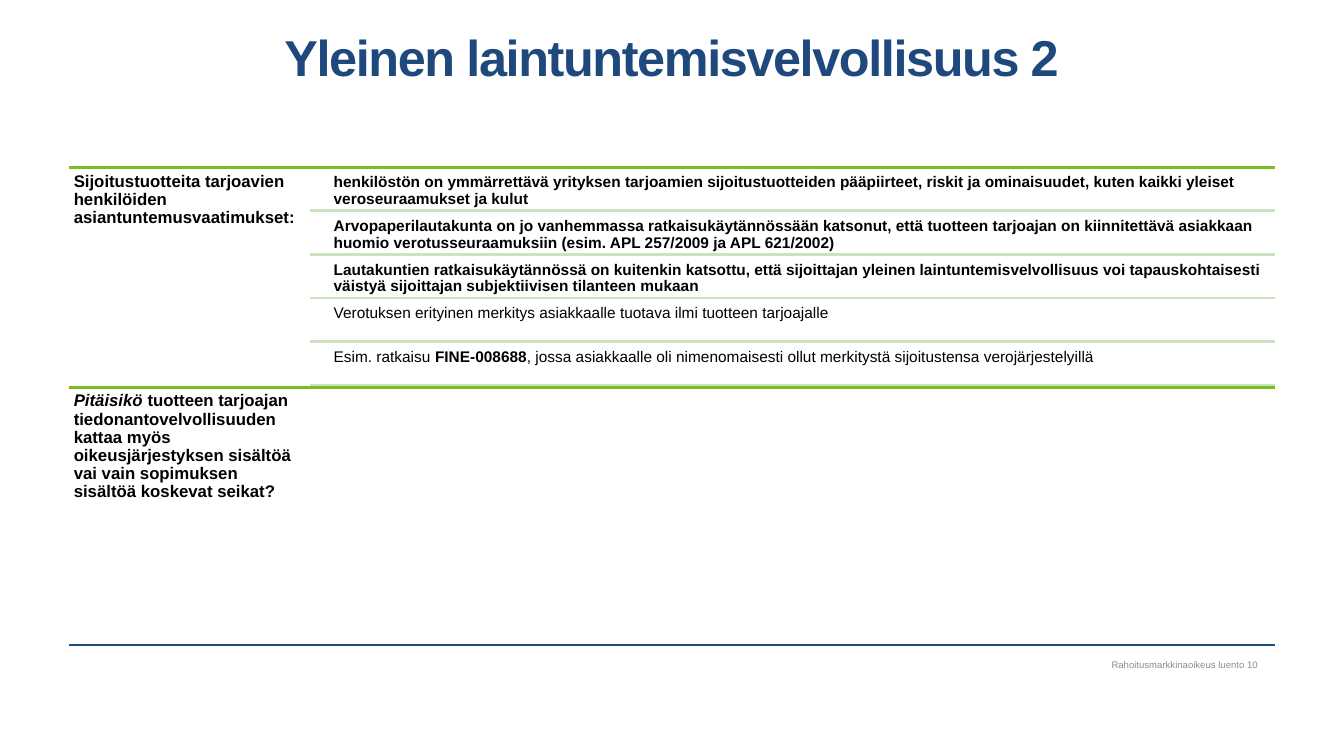
from pptx import Presentation
from pptx import util as u
from pptx.dml.color import RGBColor
from pptx.enum import shapes, text
from pptx.oxml.ns import qn

NAVY = RGBColor(0x1F, 0x49, 0x7D)
GREEN = RGBColor(0x78, 0xBE, 0x20)
PALE_GREEN = RGBColor(0xCA, 0xE2, 0xBD)
BLACK = RGBColor(0, 0, 0)
GREY = RGBColor(0x8C, 0x8C, 0x8C)

# Layout in centimetres
LEFT, RIGHT = 1.73, 32.13
RULE_LEFT, POINT_LEFT = 7.82, 8.28
HEADING_WIDTH, SECTION_HEIGHT = 6.07, 5.55
POINT_HEIGHT, POINT_PITCH = 1.04, 1.1
SECTION_TOPS = (4.22, 9.76)

# Each text is a list of (wording, style), style being "", "b" or "bi"
SECTIONS = [
    ([("Sijoitustuotteita tarjoavien henkilöiden asiantuntemusvaatimukset:", "b")],
     [
         [("henkilöstön on ymmärrettävä yrityksen tarjoamien sijoitustuotteiden "
           "pääpiirteet, riskit ja ominaisuudet, kuten kaikki yleiset "
           "veroseuraamukset ja kulut", "b")],
         [("Arvopaperilautakunta on jo vanhemmassa ratkaisukäytännössään katsonut, "
           "että tuotteen tarjoajan on kiinnitettävä asiakkaan huomio "
           "verotusseuraamuksiin (esim. APL 257/2009 ja APL 621/2002)", "b")],
         [("Lautakuntien ratkaisukäytännössä on kuitenkin katsottu, että sijoittajan "
           "yleinen laintuntemisvelvollisuus voi tapauskohtaisesti väistyä "
           "sijoittajan subjektiivisen tilanteen mukaan", "b")],
         [("Verotuksen erityinen merkitys asiakkaalle tuotava ilmi tuotteen "
           "tarjoajalle", "")],
         [("Esim. ratkaisu ", ""), ("FINE-008688", "b"),
          (", jossa asiakkaalle oli nimenomaisesti ollut merkitystä "
           "sijoitustensa verojärjestelyillä", "")],
     ]),
    ([("Pitäisikö ", "bi"),
      ("tuotteen tarjoajan tiedonantovelvollisuuden kattaa myös "
       "oikeusjärjestyksen sisältöä vai vain sopimuksen sisältöä koskevat "
       "seikat?", "b")],
     []),
]


def write(frame, runs, size, color=BLACK, align=text.PP_ALIGN.LEFT,
          line_spacing=1.0, tracking=None):
    paragraph = frame.paragraphs[0]
    paragraph.alignment = align
    paragraph.line_spacing = line_spacing
    for wording, style in runs:
        run = paragraph.add_run()
        run.text = wording
        run.font.name = "Arial"
        run.font.size = u.Pt(size)
        run.font.color.rgb = color
        run.font.bold = "b" in style
        run.font.italic = "i" in style
        if tracking is not None:
            run.font._element.set("spc", str(tracking))


class LectureSlide:
    def __init__(self, slide):
        self.slide = slide

    def rule(self, left, top, color, width=2):
        line = self.slide.shapes.add_connector(
            shapes.MSO_CONNECTOR.STRAIGHT,
            u.Cm(left), u.Cm(top), u.Cm(RIGHT), u.Cm(top))
        line.line.color.rgb = color
        line.line.width = u.Pt(width)
        properties = line._element.spPr
        properties.append(properties.makeelement(qn("a:effectLst"), {}))

    def text_box(self, left, top, width, height, runs, size,
                 margins=(0.13, 0.13, 0.13, 0.13),
                 anchor=text.MSO_ANCHOR.TOP, **style):
        box = self.slide.shapes.add_textbox(
            u.Cm(left), u.Cm(top), u.Cm(width), u.Cm(height))
        frame = box.text_frame
        frame.word_wrap = True
        frame.vertical_anchor = anchor
        (frame.margin_left, frame.margin_top,
         frame.margin_right, frame.margin_bottom) = map(u.Cm, margins)
        write(frame, runs, size, **style)

    def section(self, top, heading, points):
        self.rule(LEFT, top, GREEN)
        self.text_box(LEFT, top, HEADING_WIDTH, SECTION_HEIGHT, heading, 12,
                      line_spacing=0.9)
        for index, point in enumerate(points):
            point_top = top + 0.05 + index * POINT_PITCH
            self.text_box(POINT_LEFT, point_top, RIGHT - POINT_LEFT,
                          POINT_HEIGHT, point, 11, line_spacing=0.9)
            self.rule(RULE_LEFT, point_top + POINT_HEIGHT, PALE_GREEN)


def main():
    deck = Presentation()
    deck.slide_width, deck.slide_height = u.Cm(33.87), u.Cm(19.05)
    page = LectureSlide(deck.slides.add_slide(deck.slide_layouts[6]))

    # Title
    page.text_box(LEFT, 0.89, RIGHT - LEFT, 3.33,
                  [("Yleinen laintuntemisvelvollisuus 2", "b")], 36,
                  margins=(0, 0, 0, 0), color=NAVY,
                  align=text.PP_ALIGN.CENTER, line_spacing=0.85, tracking=-100)

    # Sections with their points
    for top, (heading, points) in zip(SECTION_TOPS, SECTIONS):
        page.section(top, heading, points)

    # Footer
    page.rule(LEFT, 16.25, NAVY, width=1)
    page.text_box(18.29, 16.54, 13.41, 0.43,
                  [("Rahoitusmarkkinaoikeus luento 10", "")], 6.8,
                  margins=(0.25, 0.13, 0, 0.13), anchor=text.MSO_ANCHOR.MIDDLE,
                  color=GREY, align=text.PP_ALIGN.RIGHT)

    deck.save("out.pptx")


if __name__ == "__main__":
    main()
